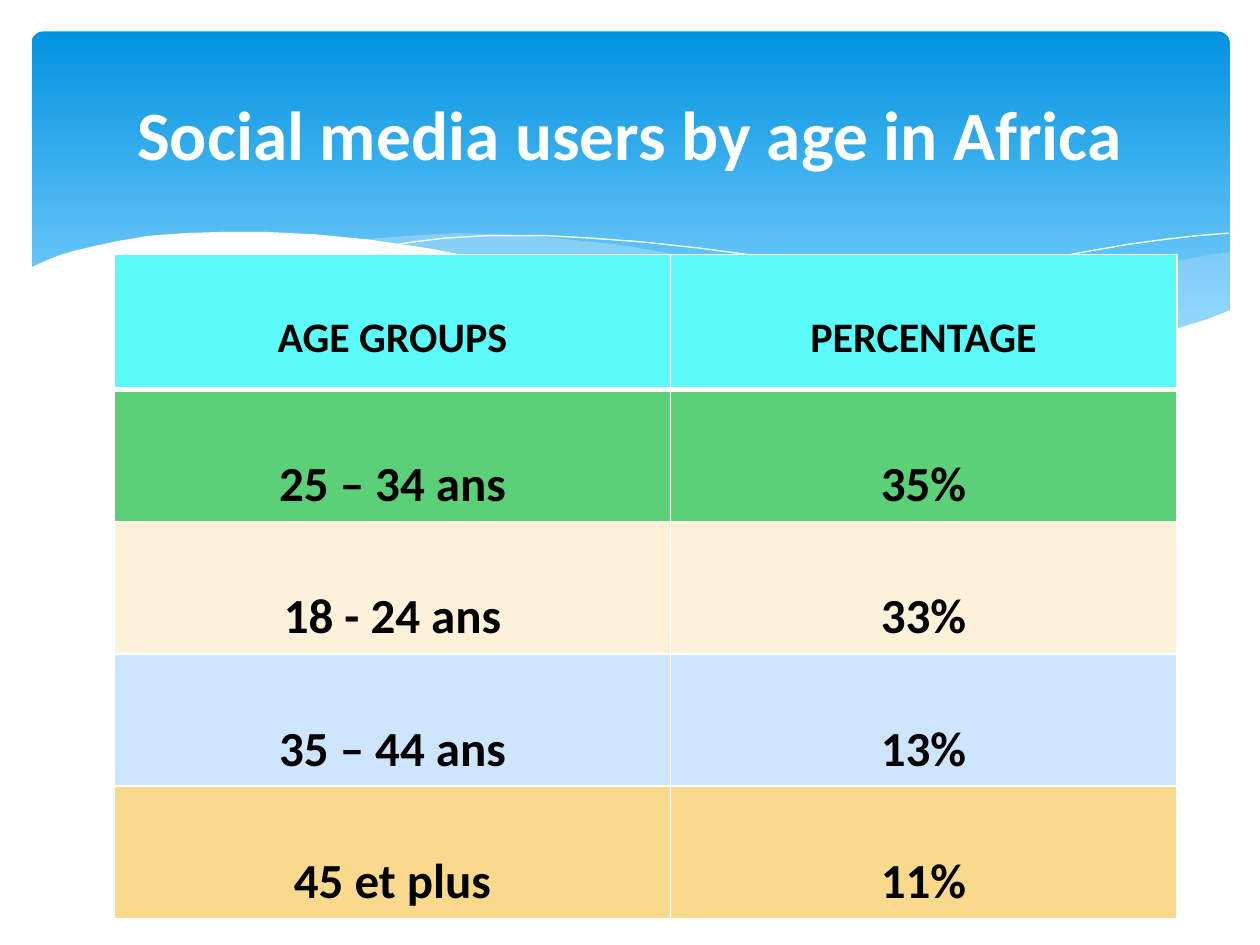
from lxml.etree import SubElement
from pptx import Presentation
from pptx.dml.color import RGBColor
from pptx.enum.shapes import MSO_SHAPE as Preset
from pptx.enum.text import MSO_ANCHOR as Anchor, PP_ALIGN as Align
from pptx.oxml import parse_xml
from pptx.oxml.ns import nsdecls, qn
from pptx.util import Inches, Pt

WHITE = RGBColor(0xFF, 0xFF, 0xFF)
BLACK = RGBColor(0x00, 0x00, 0x00)
BLUE_TOP = RGBColor(0x02, 0x93, 0xE0)
BLUE_BOTTOM = RGBColor(0x83, 0xD3, 0xFE)
PALE_BLUE = RGBColor(0xC6, 0xE7, 0xFC)
CYAN = RGBColor(0x5A, 0xFB, 0xF8)
GREEN = RGBColor(0x5B, 0xD0, 0x78)
CREAM = RGBColor(0xFD, 0xF2, 0xD9)
SKY = RGBColor(0xCE, 0xE5, 0xFE)
GOLD = RGBColor(0xF9, 0xD9, 0x8C)
FONT = "Calibri"

presentation = Presentation()
presentation.slide_width = Inches(10)
presentation.slide_height = Inches(7.5)
UNIT = presentation.slide_width // 1000  # wave points are thousandths of the width

slide = presentation.slides.add_slide(presentation.slide_layouts[5])
shapes = slide.shapes


def add_wave(points, color, opacity=100, closed=True):
    """Draw a filled wave, or a hairline when it is not closed."""
    builder = shapes.build_freeform(*points[0], scale=UNIT)
    builder.add_line_segments(points[1:], close=closed)
    wave = builder.convert_to_shape()
    wave.shadow.inherit = False
    if not closed:
        wave.fill.background()
        wave.line.color.rgb = color
        wave.line.width = Pt(0)
        return
    wave.line.fill.background()
    wave.fill.solid()
    wave.fill.fore_color.rgb = color
    if opacity < 100:
        rgb = wave.element.spPr.find(qn("a:solidFill"))[0]
        SubElement(rgb, qn("a:alpha"), val=str(opacity * 1000))


def set_borders(cell, bottom_points):
    properties = cell._tc.get_or_add_tcPr()
    sides = (("lnL", 1), ("lnR", 1), ("lnT", 1), ("lnB", bottom_points))
    for position, (side, points) in enumerate(sides):
        properties.insert(position, parse_xml(
            f'<a:{side} {nsdecls("a")} w="{Pt(points)}"><a:solidFill>'
            f'<a:srgbClr val="{WHITE}"/></a:solidFill></a:{side}>'))


# Blue banner with its waves
banner = shapes.add_shape(Preset.ROUNDED_RECTANGLE, Inches(0.25), Inches(0.25),
                          Inches(9.51), Inches(2.7))
banner.adjustments[0] = 0.034
banner.shadow.inherit = False
banner.line.fill.background()
banner.fill.gradient()
banner.fill.gradient_angle = 270
for stop, position, color in zip(banner.fill.gradient_stops, (0, 0.9),
                                 (BLUE_TOP, BLUE_BOTTOM)):
    stop.position = position
    stop.color.rgb = color

add_wave([(976, 200), (962, 202), (935, 207), (906, 213), (876, 220),
          (832, 230), (779, 242), (729, 253), (661, 265), (691, 269),
          (732, 274), (781, 277), (824, 277), (863, 275), (897, 270),
          (928, 263), (949, 257), (976, 247)], PALE_BLUE, 29)
add_wave([(893, 273), (866, 269), (807, 260), (741, 247), (668, 231),
          (629, 222), (598, 214), (569, 208), (541, 203), (514, 198),
          (489, 194), (442, 189), (399, 186), (361, 185), (328, 187),
          (299, 189), (286, 191), (323, 196), (362, 203), (404, 211),
          (449, 222), (530, 240), (601, 255), (650, 264), (695, 270),
          (736, 275), (785, 278), (838, 278), (867, 276)], PALE_BLUE, 40)
add_wave([(309, 195), (328, 192), (353, 189), (387, 187), (433, 187),
          (469, 189), (510, 192), (556, 197), (608, 204), (665, 213),
          (727, 226), (795, 241), (869, 261), (907, 272)],
         WHITE, closed=False)
add_wave([(613, 257), (653, 246), (695, 235), (748, 223), (806, 210),
          (866, 199), (895, 194), (924, 190), (951, 187), (975, 185)],
         WHITE, closed=False)
add_wave([(977, 246), (959, 253), (940, 259), (920, 265), (899, 269),
          (875, 273), (850, 275), (823, 277), (793, 276), (761, 275),
          (726, 272), (688, 268), (648, 262), (603, 254), (555, 245),
          (503, 233), (447, 220), (391, 207), (340, 197), (292, 190),
          (250, 186), (211, 184), (177, 184), (146, 185), (119, 187),
          (95, 191), (76, 195), (59, 199), (46, 203), (36, 207),
          (23, 213), (23, 329), (977, 329)], WHITE)

# Title, brought in front of the banner
title = shapes.title
shapes.element.append(title.element)
title.left, title.top = Inches(0.5), Inches(0.37)
title.width, title.height = Inches(9), Inches(1.37)
title.text_frame.text = "Social media users by age in Africa"
title.text_frame.vertical_anchor = Anchor.MIDDLE
heading = title.text_frame.paragraphs[0]
heading.alignment = Align.CENTER
heading.font.name = FONT
heading.font.size = Pt(39.6)
heading.font.bold = True
heading.font.color.rgb = WHITE

# Age table
ROWS = [
    ("AGE GROUPS", "PERCENTAGE", CYAN),
    ("25 – 34 ans", "35%", GREEN),
    ("18 - 24 ans", "33%", CREAM),
    ("35 – 44 ans", "13%", SKY),
    ("45 et plus", "11%", GOLD),
]
COLUMN_WIDTHS = (4.41, 4.02)
table = shapes.add_table(len(ROWS), len(COLUMN_WIDTHS), Inches(0.91), Inches(2.02),
                         Inches(sum(COLUMN_WIDTHS)), Inches(5.27)).table
for column, width in zip(table.columns, COLUMN_WIDTHS):
    column.width = Inches(width)

for row_index, (*texts, color) in enumerate(ROWS):
    is_header = row_index == 0
    table.rows[row_index].height = Inches(1.07 if is_header else 1.05)
    for column_index, text in enumerate(texts):
        cell = table.cell(row_index, column_index)
        cell.text = text
        cell.margin_top = Inches(0.46 if is_header else 0.52)
        cell.fill.solid()
        cell.fill.fore_color.rgb = color
        set_borders(cell, 3 if is_header else 1)
        paragraph = cell.text_frame.paragraphs[0]
        paragraph.alignment = Align.CENTER
        paragraph.font.name = FONT
        paragraph.font.size = Pt(24 if is_header else 28)
        paragraph.font.bold = True
        paragraph.font.color.rgb = BLACK

presentation.save("out.pptx")
